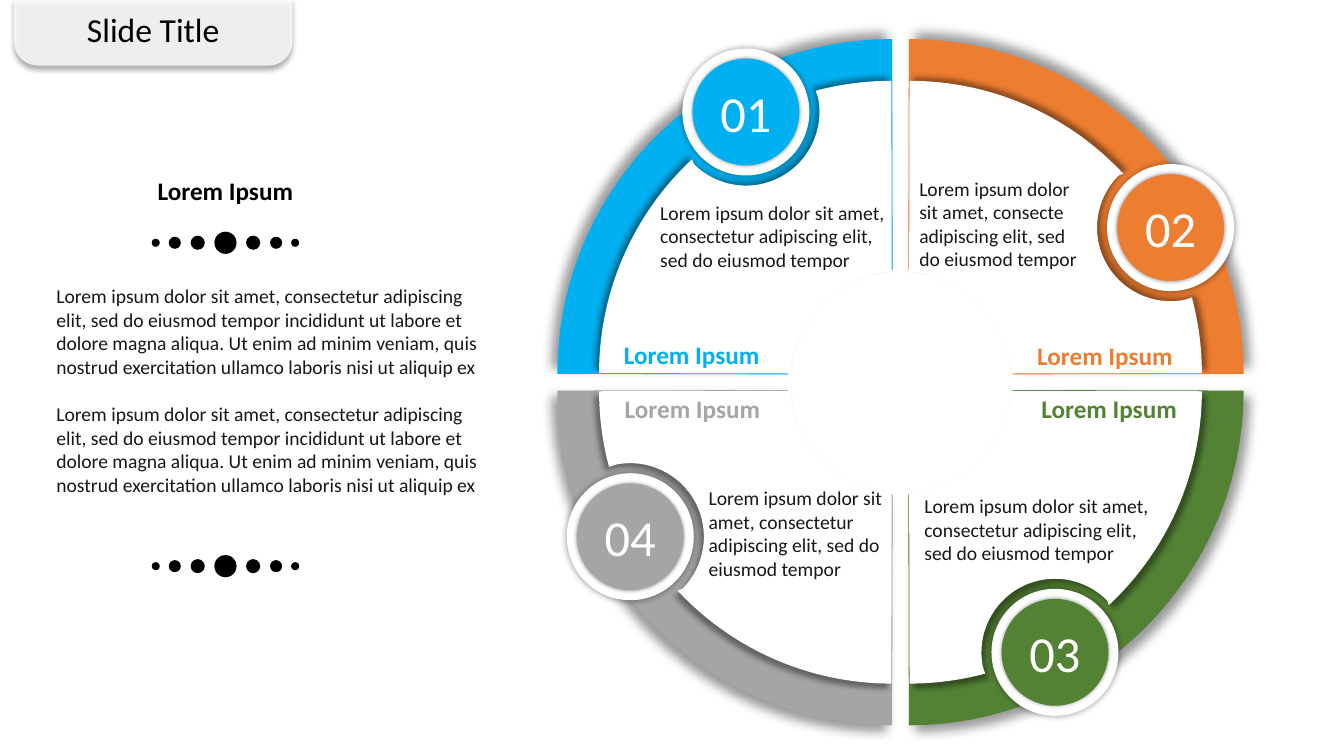
from dataclasses import dataclass
from math import cos, radians, sin, tan
from typing import Any

from lxml import etree
from pptx import Presentation, util as u
from pptx.dml.color import RGBColor
from pptx.enum import shapes, text
from pptx.oxml import ns

CELL = u.Inches(1) // 12  # the slide is a grid of 160 columns by 90 rows
COLS, ROWS = 160, 90
Point = tuple[float, float]
Oval = shapes.MSO_SHAPE.OVAL
Align, Anchor, Fit = text.PP_ALIGN, text.MSO_ANCHOR, text.MSO_AUTO_SIZE


@dataclass(frozen=True)
class Theme:
    font: str = "Calibri"
    blue: str = "00B0F0"
    orange: str = "ED7D31"
    green: str = "548235"
    grey: str = "A5A5A5"
    black: str = "000000"
    white: str = "FFFFFF"
    ink: str = "181717"
    body: int = 14
    head: int = 18
    title: int = 24
    digit: int = 36


T = Theme()


@dataclass(frozen=True)
class Box:
    col: float
    row: float
    wide: float
    high: float


@dataclass(frozen=True)
class Shade:  # blur and shift in points, angle in degrees
    blur: int
    shift: int
    angle: int = 0


@dataclass(frozen=True)
class Part:
    label: str
    color: str
    head: Point
    note: Box
    words: str


LOREM = "Lorem ipsum dolor sit amet, consectetur adipiscing elit, sed do eiusmod tempor"
LONG = (LOREM + " incididunt ut labore et dolore magna aliqua. Ut enim ad minim veniam, "
        "quis nostrud exercitation ullamco laboris nisi ut aliquip ex")

# Quarters in clockwise order, each a quarter turn from the one before
PARTS = [
    Part("01", T.blue, (70.7, 40), Box(77.76, 23.52, 28.92, 9), LOREM),
    Part("02", T.orange, (119.9, 40.2), Box(108.6, 20.64, 21.24, 12.12),
         LOREM.replace("consectetur", "consecte")),
    Part("03", T.green, (120.4, 46.44), Box(109.2, 58.44, 28.92, 9), LOREM),
    Part("04", T.grey, (70.8, 46.44), Box(83.52, 57.48, 23.4, 12.12), LOREM),
]

# Wheel measures in grid cells; the badge lies relative to the hub
HUB: Point = (107.2, 45.5)
BADGE: Point = (-18.4, -32.16)
NOTCH, DISC, CORE = 8.76, 15.12, 12.72
DOTS = [(0, 2.64), (3.3, 1.68), (6.03, 1.44), (8.3, 0.96)]  # offset, size


def emu(cells: float) -> u.Emu:
    return u.Emu(round(cells * CELL))


def place(box: Box) -> list[u.Emu]:
    return [emu(n) for n in (box.col, box.row, box.wide, box.high)]


def paint(shape: Any, color: str, shade: Shade | None = None, alpha: int = 100) -> None:
    shape.fill.solid()
    shape.fill.fore_color.rgb = RGBColor.from_string(color)
    shape.line.fill.background()
    shape.shadow.inherit = False
    props = shape._element.spPr
    if alpha < 100:
        tint = props.find(ns.qn("a:solidFill"))[0]
        etree.SubElement(tint, ns.qn("a:alpha"), val=str(alpha * 1000))
    if shade:
        cast = etree.SubElement(
            props.find(ns.qn("a:effectLst")), ns.qn("a:outerShdw"),
            blurRad=str(u.Pt(shade.blur)), dist=str(u.Pt(shade.shift)),
            dir=str(shade.angle * 60000), algn="ctr", rotWithShape="0")
        tint = etree.SubElement(cast, ns.qn("a:srgbClr"), val=T.black)
        etree.SubElement(tint, ns.qn("a:alpha"), val="40000")


def style(frame: Any, size: int, color: str, align: Any = Align.LEFT,
          bold: bool = False) -> None:
    for para in frame.paragraphs:
        para.alignment = align
        for run in para.runs:
            run.font.name = T.font
            run.font.size = u.Pt(size)
            run.font.bold = bold
            run.font.color.rgb = RGBColor.from_string(color)


def write(host: Any, box: Box, words: str, size: int, color: str,
          align: Any = Align.LEFT, bold: bool = False,
          inset: Point = (0.1, 0.05)) -> Any:
    frame = host.add_textbox(*place(box)).text_frame
    frame.text = words
    frame.word_wrap = True
    frame.auto_size = Fit.SHAPE_TO_FIT_TEXT
    frame.margin_left = frame.margin_right = u.Inches(inset[0])
    frame.margin_top = frame.margin_bottom = u.Inches(inset[1])
    style(frame, size, color, align, bold)
    return frame


def disc(host: Any, mid: Point, size: float, color: str, shade: Shade | None = None) -> Any:
    box = Box(mid[0] - size / 2, mid[1] - size / 2, size, size)
    shape = host.add_shape(Oval, *place(box))
    paint(shape, color, shade)
    return shape


def arc(mid: Point, size: float, start: float, stop: float) -> list[Point]:
    """Start, two curve handles and end of one arc of at most 90 degrees."""
    a, b = radians(start), radians(stop)
    k = 4 / 3 * tan((b - a) / 4)
    unit = [(cos(a), sin(a)), (cos(a) - k * sin(a), sin(a) + k * cos(a)),
            (cos(b) + k * sin(b), sin(b) - k * cos(b)), (cos(b), sin(b))]
    return [(mid[0] + size * x, mid[1] + size * y) for x, y in unit]


def turn(spot: Point, count: int) -> Point:
    x, y = spot
    for _ in range(count):
        x, y = -y, x
    return HUB[0] + x, HUB[1] + y


def piece(host: Any, spots: list[Point], count: int, color: str, shade: Shade) -> None:
    first, *rest = [tuple(emu(n) for n in turn(spot, count)) for spot in spots]
    pen = host.build_freeform(*first, scale=1.0)
    pen.add_line_segments(rest, close=True)
    shape = pen.convert_to_shape()
    # Every four points are one arc: the last three become its curve
    steps = list(next(shape._element.iter(ns.qn("a:path"))))
    for n in range(0, len(spots), 4):
        curve = etree.Element(ns.qn("a:cubicBezTo"))
        steps[n].addnext(curve)
        for step in steps[n + 1:n + 4]:
            curve.append(step[0])
            step.getparent().remove(step)
    paint(shape, color, shade)


def draw_part(host: Any, part: Part, count: int) -> None:
    angle = (225 + 90 * count) % 360
    # Coloured band, then the white field with a notch for the badge
    band = arc((-1, -1), 39.84, 180, 270) + arc((0, 0), 13.4, 266, 184)
    edge = (-1.08, -1.08)
    field = (arc(edge, 34.8, 180, 227) + arc(BADGE, NOTCH, 135, 62)
             + arc(BADGE, NOTCH, 62, -11) + arc(edge, 34.8, 255, 270)
             + arc((0, 0), 13.2, 265.5, 184.5))
    piece(host, band, count, part.color, Shade(8, 6, angle))
    piece(host, field, count, T.white, Shade(4, 4, angle))
    # Words
    inset = (0.07, 0.03)
    write(host, part.note, part.words, T.body, T.ink, inset=inset)
    write(host, Box(*part.head, 23.28, 4.44), "Lorem Ipsum", T.head, part.color,
          Align.CENTER, True, inset)
    # Badge
    mid = turn(BADGE, count)
    disc(host, mid, DISC, T.white, Shade(5, 0))
    frame = disc(host, mid, CORE, part.color, Shade(3, 0)).text_frame
    frame.text = part.label
    frame.vertical_anchor = Anchor.MIDDLE
    style(frame, T.digit, T.white, Align.CENTER)


def main() -> None:
    deck = Presentation()
    deck.slide_width, deck.slide_height = emu(COLS), emu(ROWS)
    host = deck.slides.add_slide(deck.slide_layouts[6]).shapes

    # Wheel
    for count, part in enumerate(PARTS):
        draw_part(host, part, count)

    # Left column
    frame = write(host, Box(5.52, 33.24, 52.92, 26.64), f"{LONG}\n{LONG}", T.body, T.ink)
    frame.paragraphs[1].space_before = u.Pt(17)
    frame = write(host, Box(12.48, 19.44, 28.68, 6.36), "Lorem Ipsum", T.head, T.black,
                  Align.CENTER, True, (0, 0))
    frame.auto_size, frame.word_wrap = Fit.NONE, False
    frame.vertical_anchor = Anchor.MIDDLE
    for row in (28.9, 67.4):
        for shift, size in DOTS:
            for side in {shift, -shift}:
                disc(host, (26.84 + side, row), size, T.black)

    # Title tab
    tab = host.add_shape(shapes.MSO_SHAPE.ROUND_2_SAME_RECTANGLE,
                         *place(Box(1.68, -0.24, 33.12, 8.04)))
    tab.adjustments[0], tab.rotation = 0.35, 180
    paint(tab, T.white, Shade(4, 3, 90), 80)
    write(host, Box(1.68, 0.48, 33.12, 6), "Slide Title", T.title, T.black, Align.CENTER)

    deck.save("out.pptx")


if __name__ == "__main__":
    main()
